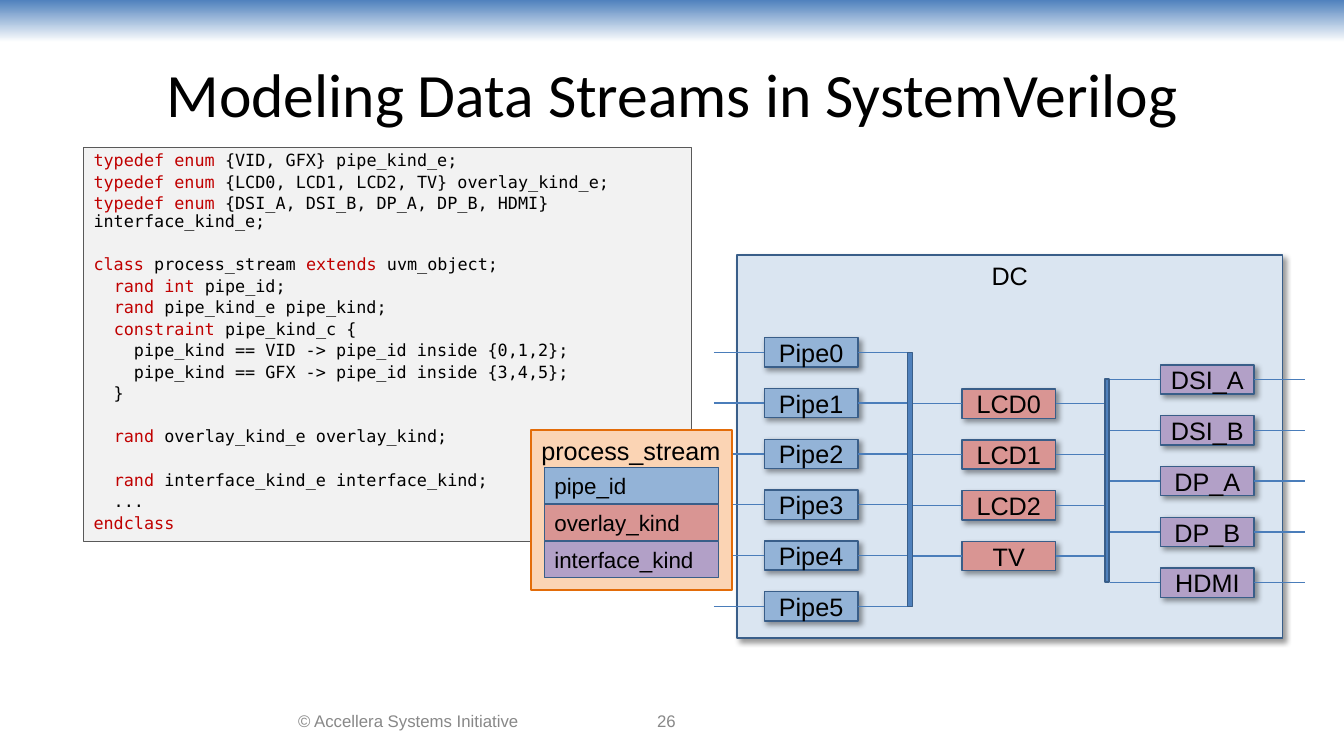
import pptx
import pptx.dml.color
import pptx.enum.shapes
import pptx.enum.text
import pptx.oxml
import pptx.oxml.ns
import pptx.util
from pptx.util import Inches

RECTANGLE = pptx.enum.shapes.MSO_SHAPE.RECTANGLE
ALIGN = pptx.enum.text.PP_ALIGN
ANCHOR = pptx.enum.text.MSO_ANCHOR
SHADOW = (
    f'<a:effectLst {pptx.oxml.ns.nsdecls("a")}>'
    '<a:outerShdw blurRad="50800" dist="38100" dir="2700000" algn="tl" rotWithShape="0">'
    '<a:srgbClr val="000000"><a:alpha val="40000"/></a:srgbClr>'
    '</a:outerShdw></a:effectLst>'
)
NO_EFFECT = f'<a:effectLst {pptx.oxml.ns.nsdecls("a")}/>'

BLUE, RED, PURPLE = "93B3D7", "D99593", "B2A0C7"
BUS, WIRE, OUTLINE = "4F81BD", "4A7DBA", "395E89"

# Keywords stand between bars.
CODE = """\
|typedef enum| {VID, GFX} pipe_kind_e;
|typedef enum| {LCD0, LCD1, LCD2, TV} overlay_kind_e;
|typedef enum| {DSI_A, DSI_B, DP_A, DP_B, HDMI} interface_kind_e;

|class| process_stream |extends| uvm_object;
  |rand int| pipe_id;
  |rand| pipe_kind_e pipe_kind;
  |constraint| pipe_kind_c {
    pipe_kind == VID -> pipe_id inside {0,1,2};
    pipe_kind == GFX -> pipe_id inside {3,4,5};
  }

  |rand| overlay_kind_e overlay_kind;

  |rand| interface_kind_e interface_kind;
  ...
|endclass|"""

BOX_WIDTH, BOX_HEIGHT, WIRE_LENGTH = 0.93, 0.29, 0.5
PITCH = 2.52 / 5
# Left edge, top of the first box, fill, labels
COLUMNS = [
    (7.58, 3.35, BLUE, [f"Pipe{number}" for number in range(6)]),
    (9.54, 3.86, RED, ["LCD0", "LCD1", "LCD2", "TV"]),
    (11.51, 3.62, PURPLE, ["DSI_A", "DSI_B", "DP_A", "DP_B", "HDMI"]),
]
FIELDS = [("pipe_id", BLUE), ("overlay_kind", RED), ("interface_kind", PURPLE)]


def color(value):
    return pptx.dml.color.RGBColor.from_string(value)


class Slide:
    def __init__(self, deck):
        self.page = deck.slides.add_slide(deck.slide_layouts[5])
        self.shapes = self.page.shapes

    def group(self):
        """Send the elements that follow into a new group."""
        self.shapes = self.page.shapes.add_group_shape().shapes

    def ungroup(self):
        self.shapes = self.page.shapes

    def label(self, box, text, size, ink="000000", font="Arial",
              align=ALIGN.CENTER, anchor=ANCHOR.MIDDLE):
        frame = box.text_frame
        frame.word_wrap = align == ALIGN.LEFT
        frame.vertical_anchor = anchor
        para = frame.paragraphs[0]
        para.text = text
        para.alignment = align
        para.font.size = pptx.util.Pt(size)
        para.font.name = font
        para.font.color.rgb = color(ink)

    def title(self, text, left, top, width, height):
        title = self.page.shapes.title
        title.left, title.top = Inches(left), Inches(top)
        title.width, title.height = Inches(width), Inches(height)
        self.label(title, text, 44, font="Calibri")

    def banner(self, left, top, width, height):
        banner = self.box(left, top, width, height, BUS)
        banner.line.fill.background()
        banner.fill.gradient()
        banner.fill.gradient_angle = 270
        for stop, value in zip(banner.fill.gradient_stops, (BUS, "FFFFFF")):
            stop.color.rgb = color(value)

    def box(self, left, top, width, height, fill, line=OUTLINE, weight=1, shadow=False):
        box = self.shapes.add_shape(
            RECTANGLE, Inches(left), Inches(top), Inches(width), Inches(height))
        box.fill.solid()
        box.fill.fore_color.rgb = color(fill)
        box.line.color.rgb = color(line)
        box.line.width = pptx.util.Pt(weight)
        if shadow:
            box._element.spPr.append(pptx.oxml.parse_xml(SHADOW))
        else:
            box.shadow.inherit = False
        return box

    def wire(self, box, side, left, right, height):
        """Draw a level wire between left and right, joined to a side of the box."""
        wire = self.shapes.add_connector(
            pptx.enum.shapes.MSO_CONNECTOR.STRAIGHT,
            Inches(left), Inches(height), Inches(right), Inches(height))
        wire.line.color.rgb = color(WIRE)
        wire.line.width = pptx.util.Pt(1)
        wire._element.spPr.append(pptx.oxml.parse_xml(NO_EFFECT))
        if side == 1:
            wire.end_connect(box, side)
        else:
            wire.begin_connect(box, side)

    def column(self, left, top, fill, names):
        """Stack labelled boxes with a wire on either side of each."""
        right = left + BOX_WIDTH
        for row, name in enumerate(names):
            box_top = top + row * PITCH
            middle = box_top + BOX_HEIGHT / 2
            box = self.box(left, box_top, BOX_WIDTH, BOX_HEIGHT, fill, shadow=True)
            self.label(box, name, 18)
            self.wire(box, 1, left - WIRE_LENGTH, left, middle)
            self.wire(box, 3, right, right + WIRE_LENGTH, middle)

    def code(self, text, left, top, width, height):
        box = self.box(left, top, width, height, "F2F2F2", "595959", 0.75)
        frame = box.text_frame
        frame.word_wrap = True
        frame.vertical_anchor = ANCHOR.TOP
        para, gap = frame.paragraphs[0], 0
        for line in text.split("\n"):
            if not line:
                gap += 15.4
                continue
            if para.runs:
                para = frame.add_paragraph()
                para.space_before = pptx.util.Pt(2.4 + gap)
            gap = 0
            para.alignment = ALIGN.LEFT
            para.line_spacing = 0.9
            para.font.size = pptx.util.Pt(12)
            para.font.name = "DejaVu Sans Mono"
            for index, part in enumerate(line.split("|")):
                if part:
                    span = para.add_run()
                    span.text = part
                    span.font.color.rgb = color("C00000" if index % 2 else "000000")

    def footer(self, text, left, width):
        box = self.shapes.add_textbox(Inches(left), Inches(6.95), Inches(width), Inches(0.4))
        self.label(box, text, 12, "888888")


def main():
    deck = pptx.Presentation()
    deck.slide_width, deck.slide_height = Inches(13.33), Inches(7.5)
    slide = Slide(deck)
    slide.banner(0, 0, 13.33, 0.42)
    slide.title("Modeling Data Streams in SystemVerilog", 0.67, 0.3, 12, 1.25)
    slide.code(CODE, 0.83, 1.46, 6.03, 3.91)

    slide.group()
    controller = slide.box(7.31, 2.53, 5.41, 3.8, "DAE5F1", shadow=True)
    slide.label(controller, "DC", 18, anchor=ANCHOR.TOP)
    for column in COLUMNS:
        slide.column(*column)
    slide.box(9, 3.5, 0.05, 5 * PITCH, BUS)
    slide.box(10.96, 3.76, 0.04, 4 * PITCH, BUS)

    slide.group()
    stream = slide.box(5.27, 4.27, 1.99, 1.58, "FBD4B4", "E36C09", 1.5)
    slide.label(stream, "process_stream", 18, align=ALIGN.LEFT, anchor=ANCHOR.TOP)
    for row, (name, fill) in enumerate(FIELDS):
        field = slide.box(5.4, 4.64 + row * 0.365, 1.73, 0.36, fill)
        slide.label(field, name, 16, align=ALIGN.LEFT)

    slide.ungroup()
    slide.footer("© Accellera Systems Initiative", 2.44, 3.22)
    slide.footer("26", 5.33, 2.56)
    deck.save("out.pptx")


if __name__ == "__main__":
    main()
